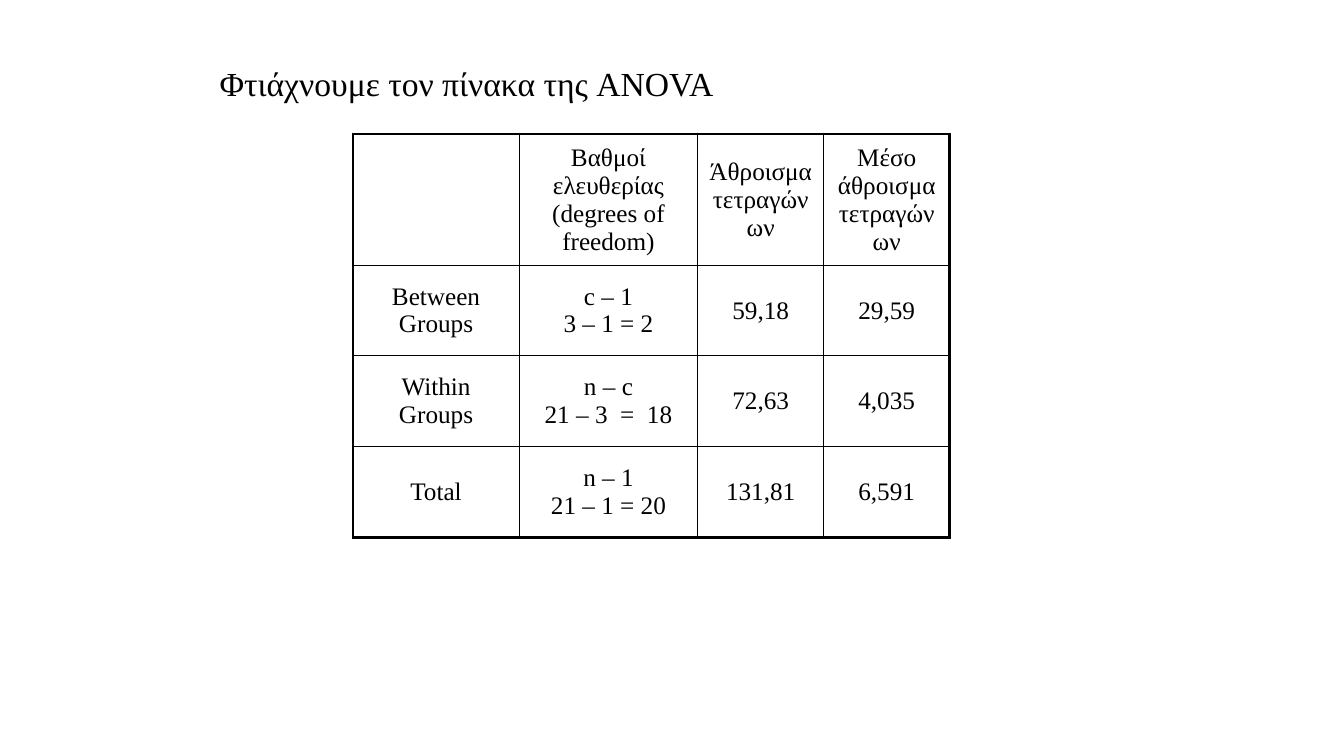
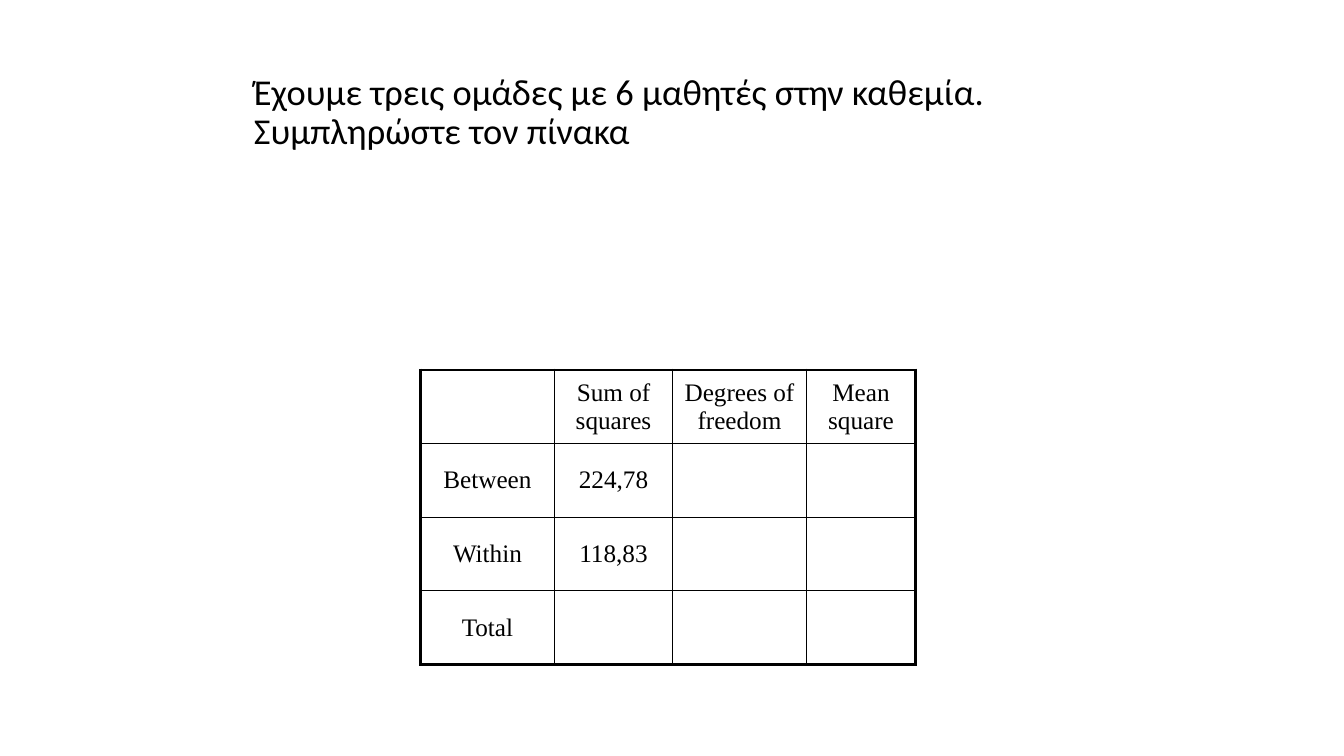
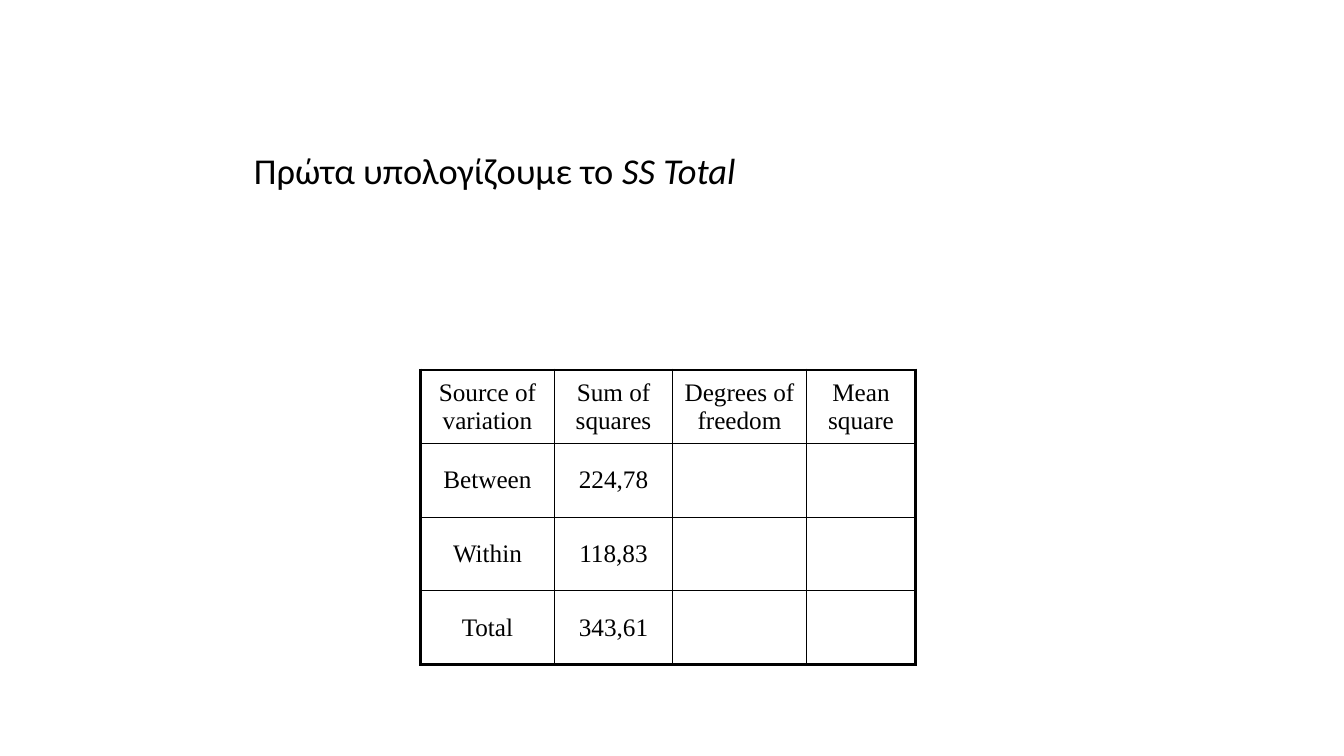
from lxml.etree import SubElement
from pptx import Presentation
from pptx.dml.color import RGBColor
from pptx.enum.text import MSO_ANCHOR as Anchor, PP_ALIGN as Align
from pptx.oxml.ns import qn
from pptx.util import Inches, Pt

COLOURS = {"ink": "000000"}
OUTER, INNER = 2.25, 1
TABLE_FONT = {"name": "Times New Roman", "size": Pt(18)}
TITLE_FONT = {"name": "Calibri", "size": Pt(26)}
TITLE_FORMAT = {"anchor": Anchor.MIDDLE, "spacing": 0.9, "font": TITLE_FONT}
HEADING_FORMAT = {"anchor": Anchor.TOP, "spacing": 1.0,
                  "font": TABLE_FONT | {"size": Pt(24)}}

EXERCISE_GRID = {"at": (4.17, 3.67), "columns": (1.33, 1.17, 1.33, 1.08),
                 "rows": (0.73,) * 4}
EXERCISE_HEADS = ("Sum of squares", "Degrees of freedom", "Mean square")

# A title is a list of (text, italic) runs.
SLIDES = [
    {
        "title": [("Φτιάχνουμε τον πίνακα της ANOVA", False)],
        "title_at": (2.08, 0.58, 8.83, 0.5),
        "title_format": HEADING_FORMAT,
        "grid": {"at": (3.5, 1.33), "columns": (1.65, 1.77, 1.25, 1.25),
                 "rows": (1.3, 0.9, 0.9, 0.9)},
        "cells": [
            ("", "Βαθμοί ελευθερίας (degrees of freedom)",
             "Άθροισμα τετραγώνων", "Μέσο άθροισμα τετραγώνων"),
            ("Between Groups", "c – 1\n3 – 1 = 2", "59,18", "29,59"),
            ("Within Groups", "n – c\n21 – 3  =  18", "72,63", "4,035"),
            ("Total", "n – 1\n21 – 1 = 20", "131,81", "6,591"),
        ],
    },
    {
        "title": [("Έχουμε τρεις ομάδες με 6 μαθητές στην καθεμία. "
                   "Συμπληρώστε τον πίνακα", False)],
        "title_at": (2.42, 0.33, 8.5, 1.58),
        "title_format": TITLE_FORMAT,
        "grid": EXERCISE_GRID,
        "cells": [
            ("", *EXERCISE_HEADS),
            ("Between", "224,78", "", ""),
            ("Within", "118,83", "", ""),
            ("Total", "", "", ""),
        ],
    },
    {
        "title": [("Πρώτα υπολογίζουμε το ", False), ("SS Total", True)],
        "title_at": (2.42, 0.92, 8.5, 1.58),
        "title_format": TITLE_FORMAT,
        "grid": EXERCISE_GRID,
        "cells": [
            ("Source of variation", *EXERCISE_HEADS),
            ("Between", "224,78", "", ""),
            ("Within", "118,83", "", ""),
            ("Total", "343,61", "", ""),
        ],
    },
]


def format_font(font, values):
    for name, value in values.items():
        setattr(font, name, value)
    font.color.rgb = RGBColor.from_string(COLOURS["ink"])


def add_title(slide, runs, at, style):
    frame = slide.shapes.add_textbox(*map(Inches, at)).text_frame
    frame.word_wrap = True
    frame.vertical_anchor = style["anchor"]
    paragraph = frame.paragraphs[0]
    paragraph.line_spacing = style["spacing"]
    for text, italic in runs:
        run = paragraph.add_run()
        run.text = text
        format_font(run.font, style["font"] | {"italic": italic})


def set_borders(cell, widths):
    """Draw the cell's sides; widths maps L, R, T and B to points."""
    properties = cell._tc.get_or_add_tcPr()
    for side, width in widths.items():
        line = SubElement(properties, qn(f"a:ln{side}"), w=str(Pt(width)))
        fill = SubElement(line, qn("a:solidFill"))
        SubElement(fill, qn("a:srgbClr"), val=COLOURS["ink"])


def fill_cell(cell, text):
    cell.fill.background()
    cell.vertical_anchor = Anchor.MIDDLE
    paragraph = cell.text_frame.paragraphs[0]
    paragraph.text = text
    paragraph.alignment = Align.CENTER
    for run in paragraph.runs:
        format_font(run.font, TABLE_FONT)


def add_grid(slide, grid, cells):
    columns, rows = grid["columns"], grid["rows"]
    size = (sum(columns), sum(rows))
    table = slide.shapes.add_table(
        len(rows), len(columns), *map(Inches, grid["at"] + size)).table
    table.first_row = table.horz_banding = False
    for column, width in zip(table.columns, columns):
        column.width = Inches(width)
    for row, height in zip(table.rows, rows):
        row.height = Inches(height)
    last_row, last_column = len(rows) - 1, len(columns) - 1
    for r, texts in enumerate(cells):
        for c, text in enumerate(texts):
            on_edge = {"L": c == 0, "R": c == last_column,
                       "T": r == 0, "B": r == last_row}
            cell = table.cell(r, c)
            set_borders(cell, {side: OUTER if edge else INNER
                               for side, edge in on_edge.items()})
            fill_cell(cell, text)


def main():
    presentation = Presentation()
    presentation.slide_width = Inches(13.33)
    presentation.slide_height = Inches(7.5)
    blank = presentation.slide_layouts[6]
    for content in SLIDES:
        slide = presentation.slides.add_slide(blank)
        add_title(slide, content["title"], content["title_at"],
                  content["title_format"])
        add_grid(slide, content["grid"], content["cells"])
    presentation.save("out.pptx")


if __name__ == "__main__":
    main()
